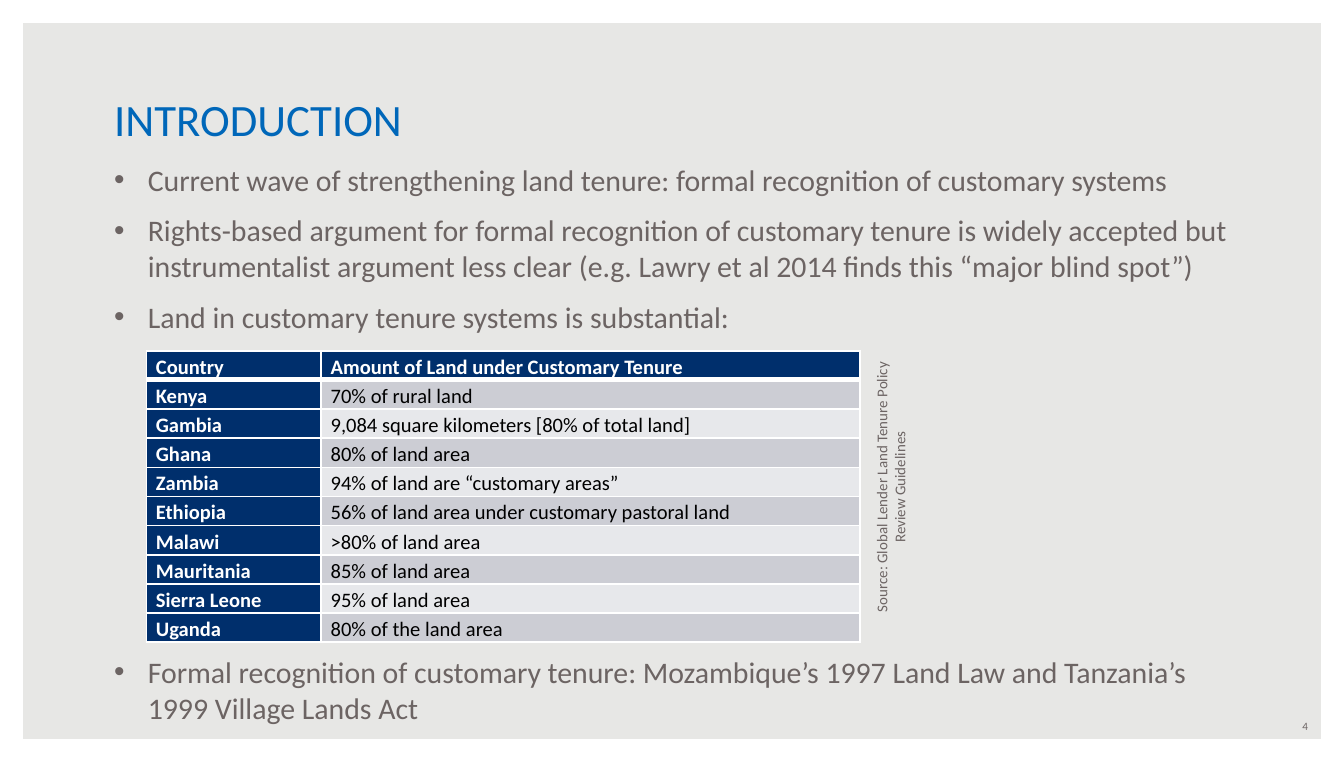
import pptx
import pptx.dml.color
import pptx.enum.shapes
import pptx.enum.text
import pptx.oxml
import pptx.oxml.ns
import pptx.util
from pptx.util import Inches

Pt = pptx.util.Pt
ALIGN = pptx.enum.text.PP_ALIGN
ANCHOR = pptx.enum.text.MSO_ANCHOR

FONT = "Calibri"
COLORS = {
    "background": "E7E7E5",
    "white": "FFFFFF",
    "black": "000000",
    "blue": "0067B9",
    "navy": "002F6C",
    "gray": "6C6463",
    "dark band": "CCCDD4",
    "light band": "E7E8EB",
}
BULLETS = [
    "Current wave of strengthening land tenure: formal recognition of customary systems",
    "Rights-based argument for formal recognition of customary tenure is widely accepted but "
    "instrumentalist argument less clear (e.g. Lawry et al 2014 finds this “major blind spot”)",
    "Land in customary tenure systems is substantial:",
    "Formal recognition of customary tenure: Mozambique’s 1997 Land Law and Tanzania’s "
    "1999 Village Lands Act",
]
TABLE_GAP = Pt(163)
TENURE = [
    ("Country", "Amount of Land under Customary Tenure"),
    ("Kenya", "70% of rural land"),
    ("Gambia", "9,084 square kilometers [80% of total land]"),
    ("Ghana", "80% of land area"),
    ("Zambia", "94% of land are “customary areas”"),
    ("Ethiopia", "56% of land area under customary pastoral land"),
    ("Malawi", ">80% of land area"),
    ("Mauritania", "85% of land area"),
    ("Sierra Leone", "95% of land area"),
    ("Uganda", "80% of the land area"),
]


def rgb(color):
    return pptx.dml.color.RGBColor.from_string(COLORS[color])


def paint(fill, color):
    fill.solid()
    fill.fore_color.rgb = rgb(color)


def style(paragraph, size, color, bold=False, align=ALIGN.LEFT):
    paragraph.alignment = align
    for run in paragraph.runs:
        run.font.name = FONT
        run.font.size = Pt(size)
        run.font.bold = bold
        run.font.color.rgb = rgb(color)


def place(shape, left, top, width, height):
    shape.left, shape.top = Inches(left), Inches(top)
    shape.width, shape.height = Inches(width), Inches(height)


def add_frame(slide, width, height):
    frame = slide.shapes.add_shape(
        pptx.enum.shapes.MSO_SHAPE.FRAME, 0, 0, width, height)
    frame.adjustments[0] = 0.03
    frame.shadow.inherit = False
    paint(frame.fill, "white")
    frame.line.fill.background()


def fill_title(title):
    place(title, 0.75, 0.63, 8.5, 0.5)
    title.text_frame.text = "INTRODUCTION"
    title.text_frame.vertical_anchor = ANCHOR.BOTTOM
    style(title.text_frame.paragraphs[0], 24, "blue")


def fill_bullets(body):
    """Write the list, leaving room for the table above the last bullet."""
    place(body, 0.75, 1.15, 8.6, 4.24)
    frame = body.text_frame
    frame.text = "\n".join(BULLETS)
    frame.auto_size = pptx.enum.text.MSO_AUTO_SIZE.NONE
    for paragraph in frame.paragraphs:
        style(paragraph, 16, "gray")
        paragraph.space_before, paragraph.space_after = Pt(0), Pt(8)
        properties = paragraph._p.get_or_add_pPr()
        properties.set("marL", str(Inches(0.25)))
        properties.set("indent", str(-Inches(0.25)))
    frame.paragraphs[-1].space_before = TABLE_GAP


def set_borders(cell, top, bottom):
    properties = cell._tc.get_or_add_tcPr()
    for side, width in (("L", 1), ("R", 1), ("T", top), ("B", bottom)):
        properties.append(pptx.oxml.parse_xml(
            f'<a:ln{side} {pptx.oxml.ns.nsdecls("a")} w="{Pt(width)}"><a:solidFill>'
            f'<a:srgbClr val="{COLORS["white"]}"/></a:solidFill></a:ln{side}>'))


def add_tenure_table(slide):
    table = slide.shapes.add_table(
        len(TENURE), 2, Inches(1.09), Inches(2.61), Inches(5.31), Inches(2.17)).table
    for column, width in zip(table.columns, (1.3, 4.01)):
        column.width = Inches(width)
    for r, row in enumerate(TENURE):
        for c, text in enumerate(row):
            cell = table.cell(r, c)
            heading = r == 0 or c == 0
            band = "dark band" if r % 2 else "light band"
            cell.text_frame.text = text
            cell.margin_left = cell.margin_right = Inches(0.07)
            cell.margin_top = cell.margin_bottom = 0
            set_borders(cell, 3 if r == 1 else 1, 3 if r == 0 else 1)
            paint(cell.fill, "navy" if heading else band)
            paragraph = cell.text_frame.paragraphs[0]
            paragraph.line_spacing = 1.15
            style(paragraph, 11, "white" if heading else "black", heading)


def add_note(slide, text, box, size, align, rotation=0):
    note = slide.shapes.add_textbox(*map(Inches, box))
    note.rotation = rotation
    note.text_frame.word_wrap = True
    note.text_frame.vertical_anchor = ANCHOR.MIDDLE
    note.text_frame.text = text
    style(note.text_frame.paragraphs[0], size, "gray", align=align)


def main():
    deck = pptx.Presentation()
    deck.slide_width, deck.slide_height = Inches(10), Inches(5.67)
    slide = deck.slides.add_slide(deck.slide_layouts[1])
    paint(slide.background.fill, "background")
    add_frame(slide, deck.slide_width, deck.slide_height)
    add_note(slide, "4", (7.5, 5.3, 2.33, 0.2), 6, ALIGN.RIGHT)
    fill_title(slide.shapes.title)
    fill_bullets(slide.placeholders[1])
    add_tenure_table(slide)
    add_note(slide, "Source: Global Lender Land Tenure Policy Review Guidelines",
             (5.53, 3.44, 2.19, 0.37), 8, ALIGN.CENTER, rotation=270)
    deck.save("out.pptx")


if __name__ == "__main__":
    main()
